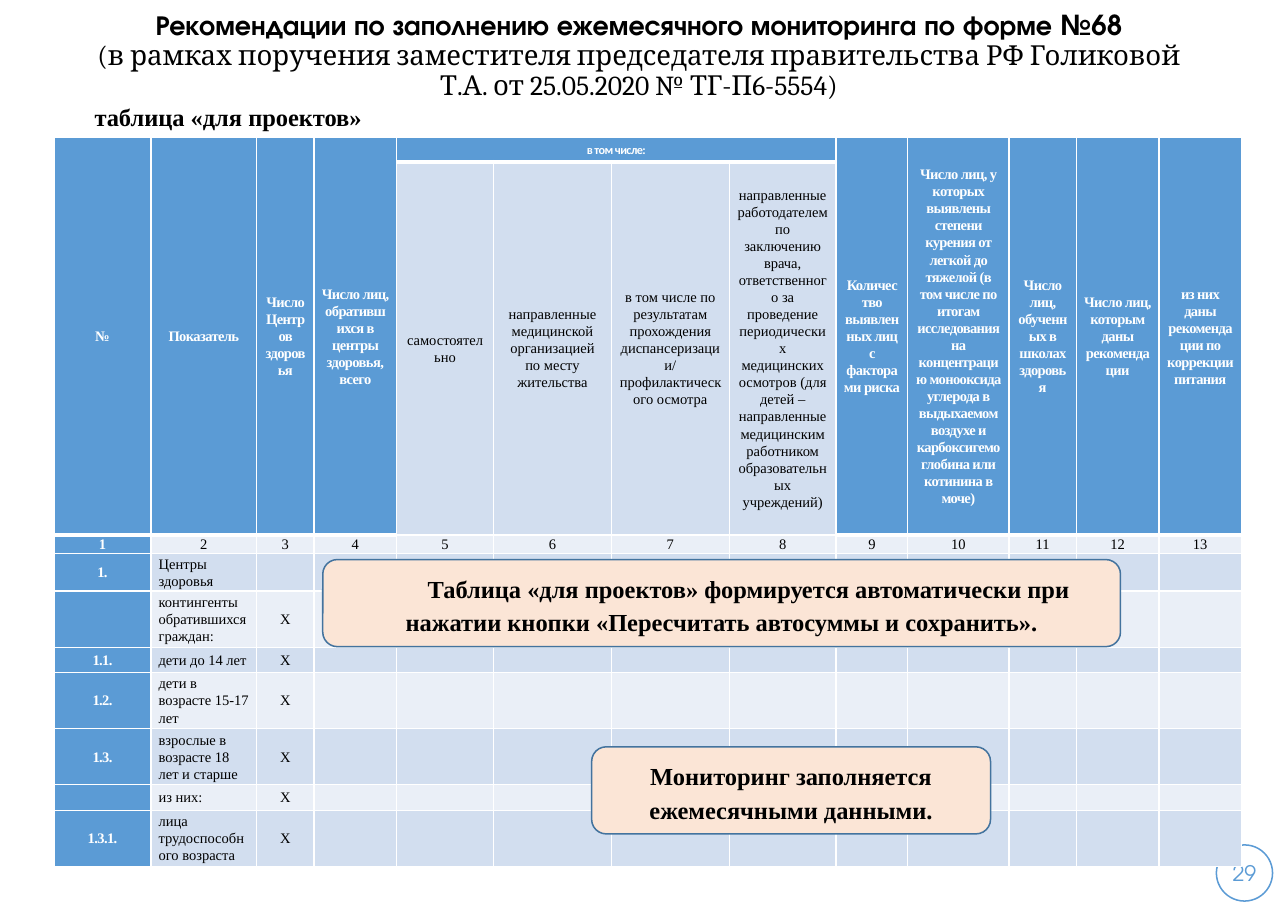
from lxml import etree
from pptx import Presentation
from pptx.dml.color import RGBColor
from pptx.enum.shapes import MSO_SHAPE
from pptx.enum.text import MSO_ANCHOR, MSO_AUTO_SIZE, PP_ALIGN
from pptx.oxml.ns import qn
from pptx.util import Emu, Pt

PX = 9144  # one px is a hundredth of an inch
LEFT, CENTER = PP_ALIGN.LEFT, PP_ALIGN.CENTER
MIDDLE = MSO_ANCHOR.MIDDLE
OVAL, ROUNDED = MSO_SHAPE.OVAL, MSO_SHAPE.ROUNDED_RECTANGLE
NO_FIT = MSO_AUTO_SIZE.NONE
SERIF, DISPLAY = "Times New Roman", "TeX Gyre Adventor"
COLORS = {"blue": "5B9BD5", "band": "D2DEEF", "pale": "EAEFF7", "white": "FFFFFF",
          "black": "000000", "peach": "FBE5D6", "outline": "43739E"}

COLUMNS = [88, 96, 52, 75, 88, 107, 107, 97, 65, 92, 61, 75, 75]
ROWS = [22, 338, 16, 34, 51, 23, 51, 51, 23, 51]
GROUP_FIRST, GROUP_LAST = 4, 7
HEADERS = [
    "№", "Показатель", "Число Центров здоровья",
    "Число лиц, обратившихся в центры здоровья,\nвсего",
    "в том числе:", "", "", "",
    "Количество выявленных лиц с факторами риска",
    "Число лиц, у которых выявлены степени курения от легкой до тяжелой (в том числе "
    "по итогам исследования на концентрацию монооксида углерода в выдыхаемом воздухе "
    "и карбоксигемоглобина или котинина в моче)",
    "Число лиц, обученных в школах здоровья",
    "Число лиц, которым даны рекомендации",
    "из них даны рекомендации по коррекции питания"]
GROUP_HEADERS = [
    "самостоятельно",
    "направленные медицинской организацией по месту жительства",
    "в том числе по результатам прохождения диспансеризации/\nпрофилактического осмотра",
    "направленные работодателем по заключению врача, ответственного за проведение "
    "периодических медицинских осмотров (для детей – направленные медицинским "
    "работником образовательных учреждений)"]
INDICATORS = [
    ("1.", "Центры здоровья", ""),
    ("", "контингенты обратившихся граждан:", "X"),
    ("1.1.", "дети до 14 лет", "X"),
    ("1.2.", "дети в возрасте 15-17 лет", "X"),
    ("1.3.", "взрослые в возрасте 18 лет и старше", "X"),
    ("", "из них:", "X"),
    ("1.3.1.", "лица трудоспособного возраста", "X")]


def px(*lengths):
    return [Emu(n * PX) for n in lengths]


def rgb(name):
    return RGBColor.from_string(COLORS[name])


def style_paragraph(p, size, font, color="black", bold=False, align=CENTER, spacing=1.0):
    p.alignment, p.line_spacing = align, spacing
    for r in p.runs:
        r.font.size, r.font.name, r.font.bold = Pt(size), font, bold
        r.font.color.rgb = rgb(color)


def add_outlined_shape(s, kind, box, line, fill=None):
    sp = s.shapes.add_shape(kind, *px(*box))
    sp.shadow.inherit = False
    if fill:
        sp.fill.solid()
        sp.fill.fore_color.rgb = rgb(fill)
    else:
        sp.fill.background()
    sp.line.color.rgb, sp.line.width = rgb(line), Pt(1)
    sp.text_frame.word_wrap = True
    sp.text_frame.vertical_anchor = MIDDLE
    return sp


def set_margins(frame, left, top, right, bottom):
    (frame.margin_left, frame.margin_top,
     frame.margin_right, frame.margin_bottom) = px(left, top, right, bottom)


def add_page_number(s, box):
    tf = add_outlined_shape(s, OVAL, box, "blue").text_frame
    set_margins(tf, 0, 0, 0, 0)
    tf.text = "29"
    style_paragraph(tf.paragraphs[0], 14, DISPLAY, "blue")


def fill_title(s, box):
    title = s.shapes.title
    title.left, title.top, title.width, title.height = px(*box)
    tf = title.text_frame
    tf.auto_size, tf.word_wrap, tf.vertical_anchor = NO_FIT, True, MIDDLE
    set_margins(tf, 0, 5, 10, 5)
    tf.text = ("Рекомендации по заполнению ежемесячного мониторинга по форме №68\n"
               "(в рамках поручения заместителя председателя правительства РФ Голиковой "
               "Т.А. от 25.05.2020 № ТГ-П6-5554)")
    heading, basis = tf.paragraphs
    style_paragraph(heading, 18, DISPLAY, bold=True, spacing=0.9)
    style_paragraph(basis, 18, "Cambria", spacing=0.9)


def add_table_name(s, box):
    tf = s.shapes.add_textbox(*px(*box)).text_frame
    tf.word_wrap = True
    tf.text = "таблица «для проектов»"
    style_paragraph(tf.paragraphs[0], 16, SERIF, bold=True, align=LEFT)


def set_borders(cell, bottom):
    """Draw white cell edges, 1 pt wide except for the bottom one."""
    tc_pr = cell._tc.get_or_add_tcPr()
    for i, (side, width) in enumerate([("L", 1), ("R", 1), ("T", 1), ("B", bottom)]):
        ln = etree.Element(qn(f"a:ln{side}"), w=str(Pt(width)))
        fill = etree.SubElement(ln, qn("a:solidFill"))
        etree.SubElement(fill, qn("a:srgbClr"), val=COLORS["white"])
        tc_pr.insert(i, ln)


def fill_cell(cell, text, fill, bottom, header, align=CENTER, size=9.5, font=SERIF):
    cell.fill.solid()
    cell.fill.fore_color.rgb = rgb(fill)
    set_borders(cell, bottom)
    set_margins(cell, 7, 0, 7, 0)
    cell.vertical_anchor = MIDDLE
    cell.text_frame.text = text
    for p in cell.text_frame.paragraphs:
        style_paragraph(p, size, font, "white" if header else "black", header, align, 1.07)
        if not p.runs:
            p._p.get_or_add_endParaRPr().set("sz", str(int(size * 100)))
        for r in p.runs:
            if header:
                r.font._element.set("spc", "-40")


def add_projects_table(s, left, top):
    box = px(left, top, sum(COLUMNS), sum(ROWS))
    table = s.shapes.add_table(len(ROWS), len(COLUMNS), *box).table
    for column, width in zip(table.columns, px(*COLUMNS)):
        column.width = width
    for row, height in zip(table.rows, px(*ROWS)):
        row.height = height

    blanks = [""] * (len(COLUMNS) - 3)
    grid = [HEADERS,
            [""] * GROUP_FIRST + GROUP_HEADERS + [""] * (len(COLUMNS) - GROUP_LAST - 1),
            [str(n + 1) for n in range(len(COLUMNS))]]
    grid += [[*indicator, *blanks] for indicator in INDICATORS]
    for i, texts in enumerate(grid):
        for j, text in enumerate(texts):
            in_group = GROUP_FIRST <= j <= GROUP_LAST
            top_header = i == 0 or i == 1 and not in_group
            header = top_header or j == 0
            fill = "blue" if header else "band" if i % 2 else "pale"
            align = LEFT if i > 2 and j == 1 else CENTER
            size, font = (8, "Calibri") if i == 0 and in_group else (9.5, SERIF)
            fill_cell(table.cell(i, j), text, fill, 3 if top_header else 1,
                      header, align, size, font)

    table.cell(0, GROUP_FIRST).merge(table.cell(0, GROUP_LAST))
    for j in range(len(COLUMNS)):
        if not GROUP_FIRST <= j <= GROUP_LAST:
            table.cell(0, j).merge(table.cell(1, j))


def add_callout(s, box, text, indent=0):
    tf = add_outlined_shape(s, ROUNDED, box, "outline", "peach").text_frame
    tf.text = text
    p = tf.paragraphs[0]
    style_paragraph(p, 16, SERIF, bold=True, spacing=1.15)
    p._p.get_or_add_pPr().set("indent", str(indent * PX))


def main():
    prs = Presentation()
    prs.slide_width, prs.slide_height = px(1169, 827)
    s = prs.slides.add_slide(prs.slide_layouts[5])
    add_page_number(s, (1104, 767, 51, 51))
    fill_title(s, (73, 4, 1024, 95))
    add_table_name(s, (76, 88, 1016, 36))
    add_projects_table(s, 49, 125)
    add_callout(s, (293, 508, 724, 79),
                "Таблица «для проектов» формируется автоматически при нажатии кнопки "
                "«Пересчитать автосуммы и сохранить».", indent=49)
    add_callout(s, (537, 678, 362, 79), "Мониторинг заполняется ежемесячными данными.")
    prs.save("out.pptx")


if __name__ == "__main__":
    main()
